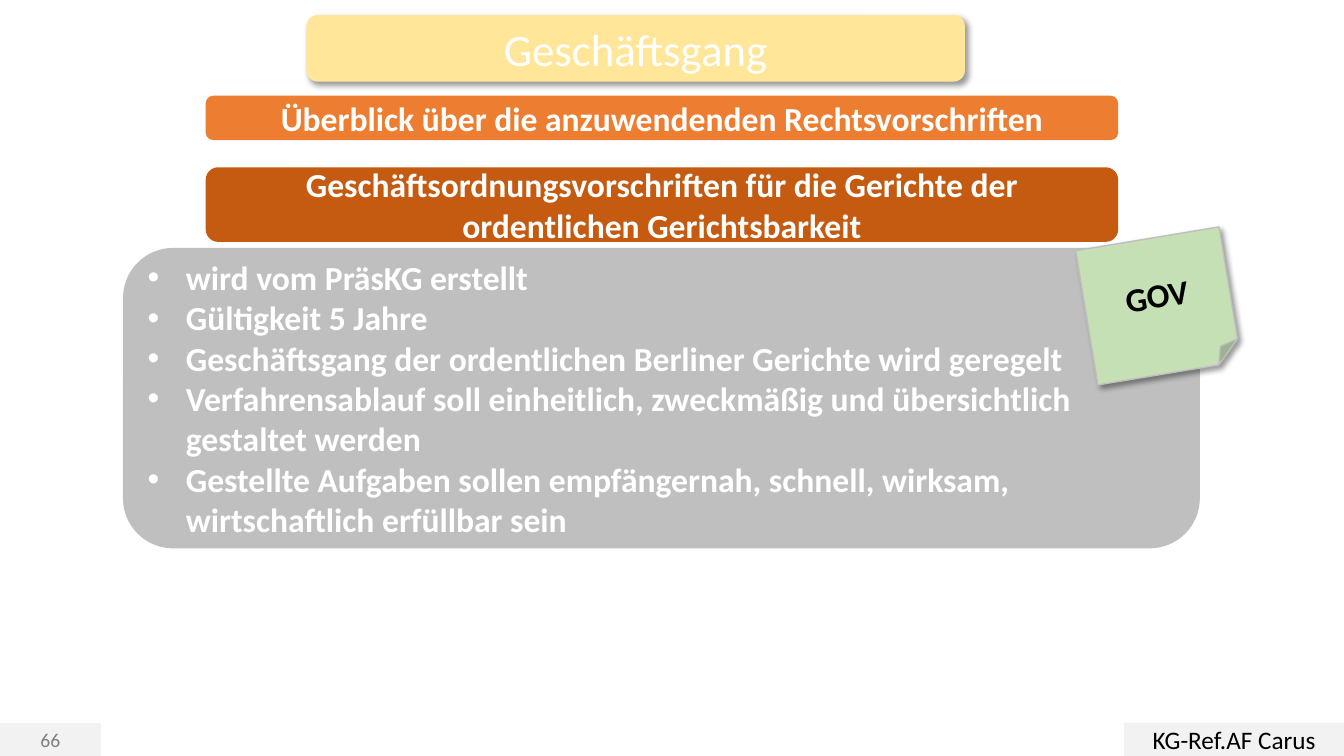
from lxml import etree
from pptx import Presentation
from pptx.dml.color import RGBColor
from pptx.enum.shapes import MSO_SHAPE as Shape
from pptx.enum.text import MSO_ANCHOR as Anchor, PP_ALIGN as Align
from pptx.oxml import parse_xml
from pptx.oxml.ns import nsdecls, qn
from pptx.util import Inches, Pt


def color(value):
    return RGBColor.from_string(value)


class SlideBuilder:
    font = "Calibri"
    white = "FFFFFF"
    black = "000000"
    light = "F2F2F2"
    gray = "BFBFBF"

    def __init__(self, slide):
        self.slide = slide

    def box(self, kind, place, fill, lines, size=24, ink=white, bold=True,
            line=None, bullets=False):
        shape = self.slide.shapes.add_shape(kind, *map(Inches, place))
        shape.shadow.inherit = False
        shape.fill.solid()
        shape.fill.fore_color.rgb = color(fill)
        if line:
            shape.line.color.rgb = color(line)
            shape.line.width = Pt(1)
        else:
            shape.line.fill.background()
        frame = shape.text_frame
        frame.word_wrap = True
        frame.vertical_anchor = Anchor.MIDDLE
        frame.text = "\n".join(lines)
        for paragraph in frame.paragraphs:
            paragraph.alignment = Align.LEFT if bullets else Align.CENTER
            if bullets:
                self.bullet(paragraph)
            for run in paragraph.runs:
                run.font.name = self.font
                run.font.size = Pt(size)
                run.font.bold = bold
                run.font.color.rgb = color(ink)
        return shape

    def bullet(self, paragraph):
        properties = paragraph._p.get_or_add_pPr()
        indent = Inches(0.38)
        properties.set("marL", str(indent))
        properties.set("indent", str(-indent))
        etree.SubElement(properties, qn("a:buFont")).set("typeface", "Arial")
        etree.SubElement(properties, qn("a:buChar")).set("char", "•")

    def shadow(self, shape):
        effects = shape._element.spPr.find(qn("a:effectLst"))
        effects.append(parse_xml(
            f'<a:outerShdw {nsdecls("a")} blurRad="{Pt(4)}" dist="{Pt(3)}" '
            'dir="2700000" algn="tl" rotWithShape="0">'
            f'<a:srgbClr val="{self.black}"><a:alpha val="40000"/></a:srgbClr>'
            '</a:outerShdw>'))


def main():
    presentation = Presentation()
    presentation.slide_width = Inches(13.33)
    presentation.slide_height = Inches(7.5)
    slide = presentation.slides.add_slide(presentation.slide_layouts[6])
    builder = SlideBuilder(slide)

    # Headings
    builder.box(Shape.ROUNDED_RECTANGLE, (2.04, 1.66, 9.05, 0.74), "C55A11",
                ["Geschäftsordnungsvorschriften für die Gerichte der "
                 "ordentlichen Gerichtsbarkeit"])
    builder.box(Shape.ROUNDED_RECTANGLE, (2.04, 0.95, 9.05, 0.44), "ED7D31",
                ["Überblick über die anzuwendenden Rechtsvorschriften"])
    title = builder.box(Shape.ROUNDED_RECTANGLE, (3.04, 0.15, 6.53, 0.66),
                        "FFE699", ["Geschäftsgang"], size=32, bold=False)
    builder.shadow(title)

    # Footer
    builder.box(Shape.RECTANGLE, (0, 7.18, 1, 0.32), builder.light, ["66"],
                size=14, ink="808080", bold=False, line=builder.light)
    builder.box(Shape.RECTANGLE, (11.15, 7.17, 2.18, 0.33), builder.light,
                ["KG-Ref.AF Carus"], size=18, ink=builder.black, bold=False)

    # Rules panel
    builder.box(Shape.ROUNDED_RECTANGLE, (1.22, 2.46, 10.68, 2.98),
                builder.gray, [
                    "wird vom PräsKG erstellt",
                    "Gültigkeit 5 Jahre",
                    "Geschäftsgang der ordentlichen Berliner Gerichte wird geregelt",
                    "Verfahrensablauf soll einheitlich, zweckmäßig und "
                    "übersichtlich gestaltet werden",
                    "Gestellte Aufgaben sollen empfängernah, schnell, wirksam, "
                    "wirtschaftlich erfüllbar sein",
                ], bullets=True)

    # Sticky note
    note = builder.box(Shape.FOLDED_CORNER, (10.77, 2.36, 1.44, 1.35),
                       "C5E0B4", ["GOV"], ink=builder.black, line=builder.gray)
    note.rotation = 350.6
    builder.shadow(note)

    presentation.save("out.pptx")


if __name__ == "__main__":
    main()
